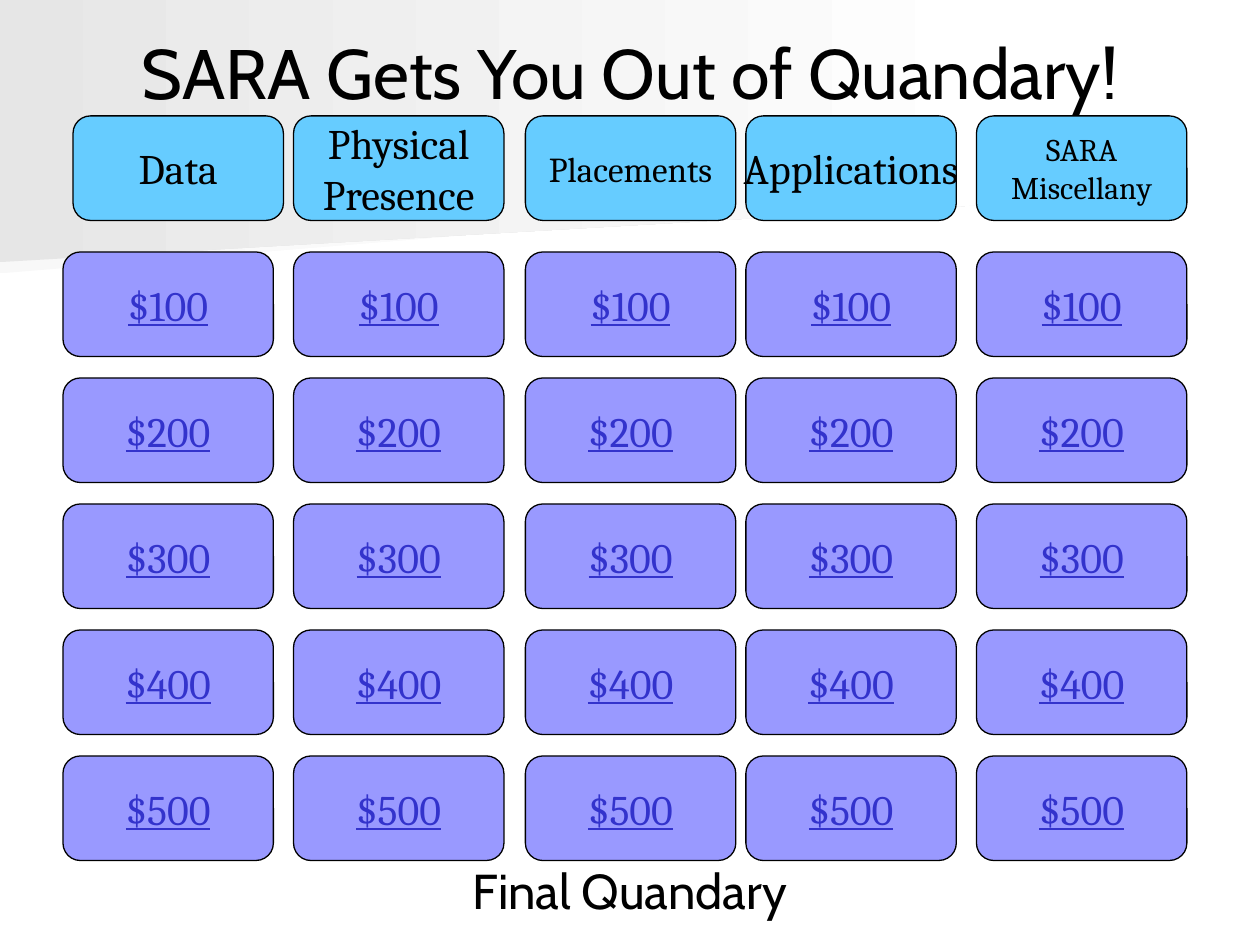
import pptx
import pptx.dml.color
import pptx.enum.shapes
import pptx.enum.text
import pptx.util

Inches = pptx.util.Inches

COLORS = {
    "black": "000000",
    "heading": "66CCFF",
    "prize": "9999FF",
    "link": "3333CC",
    "pale": "F8F8F8",
    "gray": "E6E6E6",
    "white": "FFFFFF",
}


class Board:
    """Hold the style and the current slide of a quiz board."""

    title_font = "Cabin"
    tile_font = "Cambria"
    tile_width = 1.67
    tile_height = 0.83

    def __init__(self, slide):
        self.slide = slide

    def color(self, name):
        return pptx.dml.color.RGBColor.from_string(COLORS[name])

    def label(self, shape, text, font, size, color, wrap=True, underline=False):
        frame = shape.text_frame
        frame.word_wrap = wrap
        frame.vertical_anchor = pptx.enum.text.MSO_ANCHOR.MIDDLE
        paragraph = frame.paragraphs[0]
        paragraph.text = text
        paragraph.alignment = pptx.enum.text.PP_ALIGN.CENTER
        paragraph.font.name = font
        paragraph.font.size = pptx.util.Pt(size)
        paragraph.font.color.rgb = self.color(color)
        if underline:
            paragraph.font.underline = True

    def backdrop(self, points, start_color):
        corners = [(Inches(x), Inches(y)) for x, y in points]
        builder = self.slide.shapes.build_freeform(*corners[0])
        builder.add_line_segments(corners[1:], close=True)
        shape = builder.convert_to_shape()
        shape.shadow.inherit = False
        shape.line.fill.background()
        shape.fill.gradient()
        shape.fill.gradient_angle = 0
        for stop, name in zip(shape.fill.gradient_stops, (start_color, "white")):
            stop.color.rgb = self.color(name)

    def caption(self, top, text, size):
        shape = self.slide.shapes.add_textbox(
            Inches(0.5), Inches(top), Inches(9), Inches(0.53))
        self.label(shape, text, self.title_font, size, "black")

    def tile(self, left, top, fill, text, size=24, color="black", wrap=False,
             underline=False):
        shape = self.slide.shapes.add_shape(
            pptx.enum.shapes.MSO_SHAPE.FLOWCHART_ALTERNATE_PROCESS,
            Inches(left), Inches(top),
            Inches(self.tile_width), Inches(self.tile_height))
        shape.shadow.inherit = False
        shape.fill.solid()
        shape.fill.fore_color.rgb = self.color(fill)
        shape.line.color.rgb = self.color("black")
        shape.line.width = pptx.util.Pt(0.75)
        self.label(shape, text, self.tile_font, size, color, wrap, underline)


def main():
    presentation = pptx.Presentation()
    presentation.slide_width = Inches(10)
    presentation.slide_height = Inches(7.5)
    board = Board(presentation.slides.add_slide(presentation.slide_layouts[6]))

    board.backdrop([(7.78, 1.53), (0, 2.17), (0, 1.01), (7.79, 1.01), (7.78, 1.28)],
                   "pale")
    board.backdrop([(7.92, 1.62), (0, 2.08), (0, 0), (7.92, 0)], "gray")
    board.caption(0.3, "SARA Gets You Out of Quandary!", 40)

    headings = [
        (0.58, "Data", 24, False),
        (2.33, "Physical Presence", 24, True),
        (4.17, "Placements", 20, True),
        (5.92, "Applications", 24, False),
        (7.75, "SARA Miscellany", 18, True),
    ]
    for left, text, size, wrap in headings:
        board.tile(left, 0.92, "heading", text, size, wrap=wrap)

    for left in (0.5, 2.33, 4.17, 5.92, 7.75):
        for level in range(1, 6):
            board.tile(left, level + 1, "prize", f"${level * 100}",
                       color="link", underline=True)

    board.caption(6.8, "Final Quandary", 28)
    presentation.save("out.pptx")


if __name__ == "__main__":
    main()
